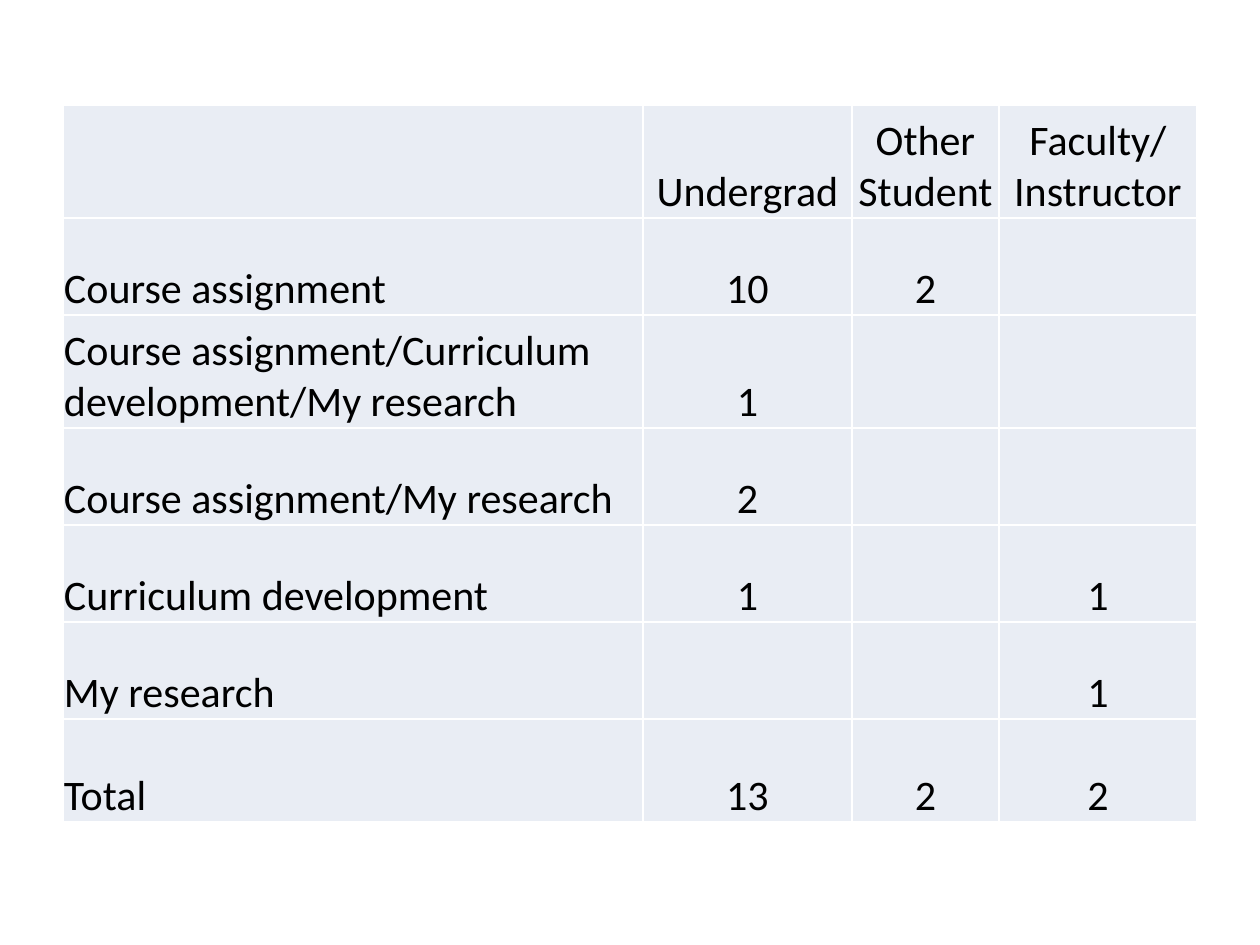
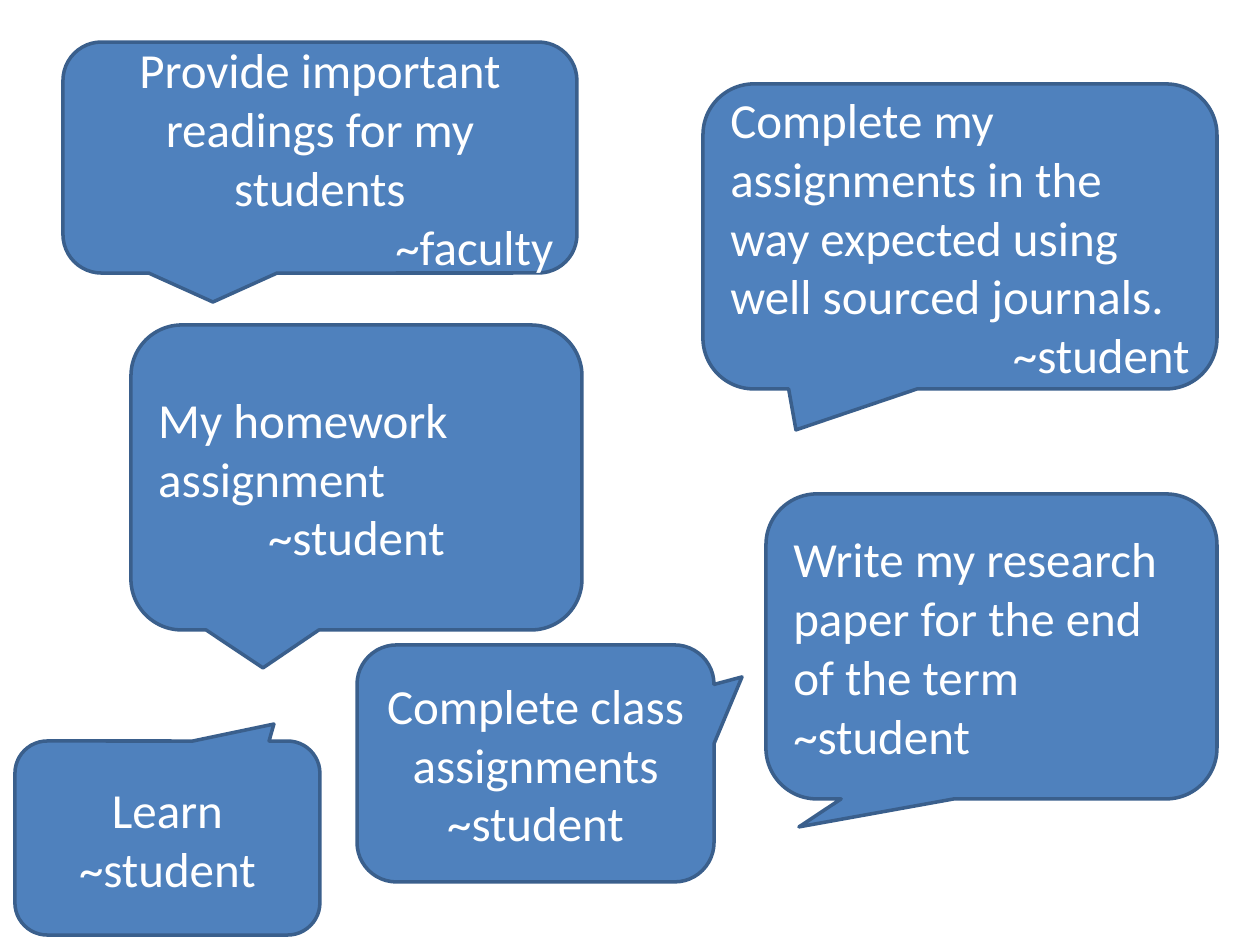
from dataclasses import dataclass

from lxml.etree import SubElement
from pptx import Presentation
from pptx.dml.color import RGBColor
from pptx.enum.shapes import MSO_SHAPE
from pptx.enum.text import MSO_ANCHOR as ANCHOR, PP_ALIGN as ALIGN
from pptx.oxml.ns import qn
from pptx.util import Emu, Pt


@dataclass(frozen=True)
class Theme:
    font: str = "Calibri"
    table_size: int = 24
    callout_size: int = 28
    table_text: str = "000000"
    table_fill: str = "E9EDF4"
    table_border: str = "FFFFFF"
    border_width: int = 1
    callout_text: str = "FFFFFF"
    callout_fill: str = "4F81BD"
    callout_line: str = "3A5F8C"
    line_width: int = 2


THEME = Theme()
EMU_PER_PX = 914400 / 126
SLIDE_SIZE = (1260, 945)

TABLE_ORIGIN = (63, 105)
COLUMN_WIDTHS = (580, 209, 147, 198)
ROW_HEIGHTS = (113, 97, 113, 97, 97, 97, 103)
USES_BY_ROLE = [
    ("", "Undergrad", "Other Student", "Faculty/\nInstructor"),
    ("Course assignment", "10", "2", ""),
    ("Course assignment/Curriculum development/My research", "1", "", ""),
    ("Course assignment/My research", "2", "", ""),
    ("Curriculum development", "1", "", "1"),
    ("My research", "", "", "1"),
    ("Total", "13", "2", "2"),
]

# Box (left, top, width, height), tip of the tail (x, y), aligned paragraphs
CALLOUTS = [
    ((63, 42, 514, 231), (213, 302),
     [("Provide important readings for my students", ALIGN.CENTER),
      ("~faculty", ALIGN.RIGHT)]),
    ((131, 325, 451, 305), (263, 668),
     [("My homework assignment", ALIGN.LEFT), ("~student", ALIGN.CENTER)]),
    ((357, 645, 357, 237), (742, 677),
     [("Complete class assignments", ALIGN.CENTER),
      ("~student", ALIGN.CENTER)]),
    ((15, 741, 305, 194), (274, 724),
     [("Learn", ALIGN.CENTER), ("~student", ALIGN.CENTER)]),
    ((766, 494, 451, 305), (799, 827),
     [("Write my research paper for the end of the term ~student",
       ALIGN.LEFT)]),
    ((703, 84, 514, 305), (796, 430),
     [("Complete my assignments in the way expected using "
       "well sourced journals.", ALIGN.LEFT),
      ("~student", ALIGN.RIGHT)]),
]


def px(length):
    return Emu(round(length * EMU_PER_PX))


def color(value):
    return RGBColor.from_string(value)


def write_paragraph(paragraph, text, alignment, size, text_color):
    """Fill a paragraph; a newline in the text becomes a line break."""
    paragraph.alignment = alignment
    for index, line in enumerate(text.split("\n")):
        if index:
            paragraph.add_line_break()
        run = paragraph.add_run()
        run.text = line
        run.font.name = THEME.font
        run.font.size = Pt(size)
        run.font.color.rgb = color(text_color)


def add_borders(cell):
    properties = cell._tc.get_or_add_tcPr()
    for side in ("a:lnL", "a:lnR", "a:lnT", "a:lnB"):
        line = SubElement(properties, qn(side), w=str(Pt(THEME.border_width)))
        fill = SubElement(line, qn("a:solidFill"))
        SubElement(fill, qn("a:srgbClr"), val=THEME.table_border)


def style_cell(cell):
    add_borders(cell)
    cell.fill.solid()
    cell.fill.fore_color.rgb = color(THEME.table_fill)
    cell.vertical_anchor = ANCHOR.BOTTOM
    cell.margin_left = cell.margin_right = cell.margin_top = px(1)
    cell.margin_bottom = 0


def add_uses_table(slide):
    frame = slide.shapes.add_table(
        len(ROW_HEIGHTS), len(COLUMN_WIDTHS), *map(px, TABLE_ORIGIN),
        px(sum(COLUMN_WIDTHS)), px(sum(ROW_HEIGHTS)))
    table = frame.table
    table.first_row = table.horz_banding = False
    for column, width in zip(table.columns, COLUMN_WIDTHS):
        column.width = px(width)
    for row, height, texts in zip(table.rows, ROW_HEIGHTS, USES_BY_ROLE):
        row.height = px(height)
        for index, (cell, text) in enumerate(zip(row.cells, texts)):
            style_cell(cell)
            if text:
                write_paragraph(cell.text_frame.paragraphs[0], text,
                                ALIGN.CENTER if index else ALIGN.LEFT,
                                THEME.table_size, THEME.table_text)


def add_callout(slide, box, tip, paragraphs):
    left, top, width, height = box
    shape = slide.shapes.add_shape(
        MSO_SHAPE.ROUNDED_RECTANGULAR_CALLOUT, *map(px, box))
    # The tail is set as an offset from the box centre, in box sizes
    shape.adjustments[0] = (tip[0] - left) / width - 0.5
    shape.adjustments[1] = (tip[1] - top) / height - 0.5
    shape.shadow.inherit = False
    shape.fill.solid()
    shape.fill.fore_color.rgb = color(THEME.callout_fill)
    shape.line.color.rgb = color(THEME.callout_line)
    shape.line.width = Pt(THEME.line_width)

    frame = shape.text_frame
    frame.word_wrap = True
    frame.vertical_anchor = ANCHOR.MIDDLE
    for index, (text, alignment) in enumerate(paragraphs):
        paragraph = frame.add_paragraph() if index else frame.paragraphs[0]
        write_paragraph(paragraph, text, alignment,
                        THEME.callout_size, THEME.callout_text)


def main():
    presentation = Presentation()
    presentation.slide_width, presentation.slide_height = map(px, SLIDE_SIZE)
    blank = presentation.slide_layouts[6]

    add_uses_table(presentation.slides.add_slide(blank))

    quotes_slide = presentation.slides.add_slide(blank)
    for callout in CALLOUTS:
        add_callout(quotes_slide, *callout)

    presentation.save("out.pptx")


if __name__ == "__main__":
    main()
